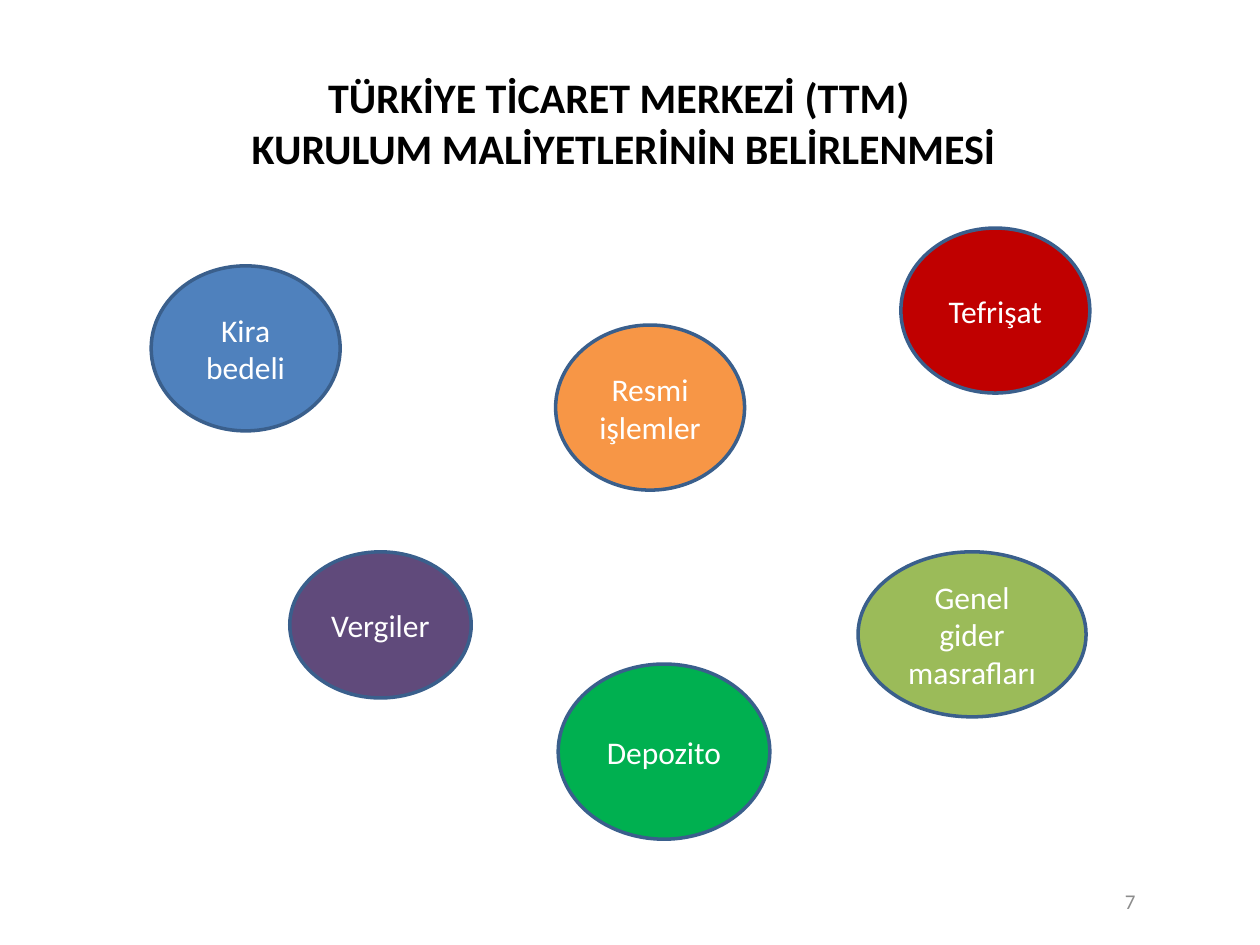
import pptx
import pptx.dml.color
import pptx.enum.shapes
import pptx.enum.text
import pptx.util

Inches = pptx.util.Inches
Align = pptx.enum.text.PP_ALIGN
Anchor = pptx.enum.text.MSO_ANCHOR

COLORS = {
    "black": "000000",
    "white": "FFFFFF",
    "gray": "8C8C8C",
    "outline": "3A5F8C",
    "blue": "4F81BD",
    "olive": "9BBB59",
    "purple": "604A7B",
    "orange": "F79646",
    "red": "C00000",
    "green": "00B050",
}

COSTS = [
    ("Kira bedeli", "blue", (1.2, 2.11, 1.5, 1.31)),
    ("Genel gider masrafları", "olive", (6.81, 4.38, 1.81, 1.31)),
    ("Vergiler", "purple", (2.3, 4.38, 1.44, 1.16)),
    ("Resmi işlemler", "orange", (4.41, 2.58, 1.5, 1.31)),
    ("Tefrişat", "red", (7.15, 1.81, 1.5, 1.31)),
    ("Depozito", "green", (4.43, 5.27, 1.68, 1.39)),
]


class CostSlide:
    """Holds the text style and the slide, and adds elements to it."""

    font_name = "Calibri"

    def __init__(self, slide):
        self.slide = slide

    def color(self, name):
        return pptx.dml.color.RGBColor.from_string(COLORS[name])

    def fill_text(self, frame, lines, size, color, align, anchor, bold=False):
        frame.word_wrap = True
        frame.vertical_anchor = anchor
        for index, line in enumerate(lines):
            paragraph = frame.add_paragraph() if index else frame.paragraphs[0]
            paragraph.alignment = align
            run = paragraph.add_run()
            run.text = line
            run.font.name = self.font_name
            run.font.size = pptx.util.Pt(size)
            run.font.bold = bold
            run.font.color.rgb = self.color(color)

    def text(self, box, lines, size, color, align, anchor=Anchor.TOP, bold=False):
        label = self.slide.shapes.add_textbox(*map(Inches, box))
        self.fill_text(label.text_frame, lines, size, color, align, anchor, bold)

    def ellipse(self, box, caption, fill):
        oval = self.slide.shapes.add_shape(
            pptx.enum.shapes.MSO_SHAPE.OVAL, *map(Inches, box))
        oval.shadow.inherit = False
        oval.fill.solid()
        oval.fill.fore_color.rgb = self.color(fill)
        oval.line.color.rgb = self.color("outline")
        oval.line.width = pptx.util.Pt(2)
        self.fill_text(
            oval.text_frame, [caption], 18, "white", Align.CENTER, Anchor.MIDDLE)


def main():
    deck = pptx.Presentation()
    deck.slide_width, deck.slide_height = Inches(10), Inches(7.5)
    costs = CostSlide(deck.slides.add_slide(deck.slide_layouts[6]))
    costs.text((7.01, 6.95, 2.1, 0.4), ["7"], 12, "gray", Align.RIGHT, Anchor.MIDDLE)
    title = ["TÜRKİYE TİCARET MERKEZİ (TTM) ", "KURULUM MALİYETLERİNİN BELİRLENMESİ"]
    costs.text((1.11, 0.52, 7.68, 0.91), title, 24, "black", Align.CENTER, bold=True)
    for caption, fill, box in COSTS:
        costs.ellipse(box, caption, fill)
    deck.save("out.pptx")


if __name__ == "__main__":
    main()
